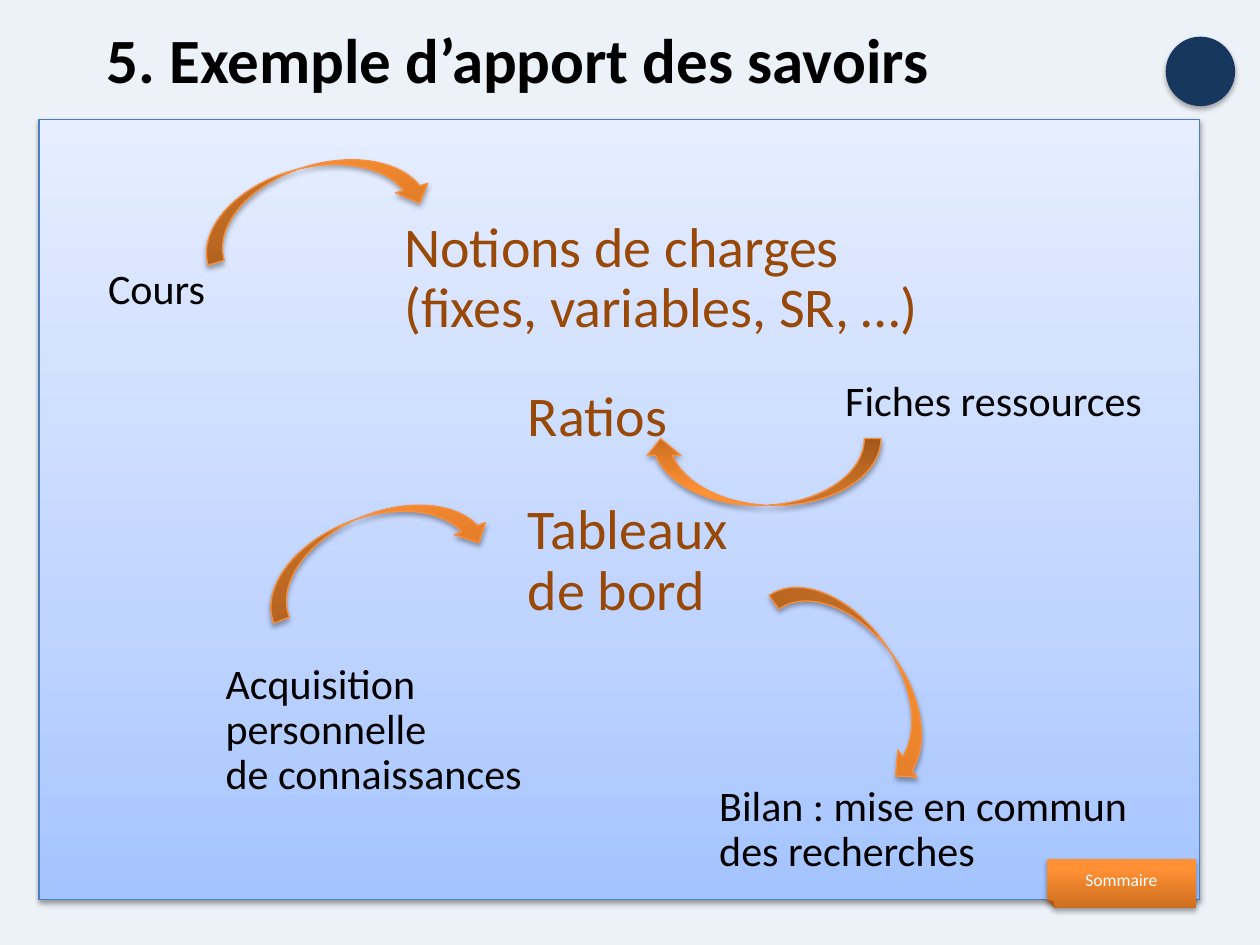
from collections import namedtuple

from lxml.etree import SubElement
from pptx import Presentation
from pptx.dml.color import RGBColor
from pptx.enum.shapes import MSO_SHAPE
from pptx.enum.text import MSO_ANCHOR, MSO_AUTO_SIZE, PP_ALIGN
from pptx.oxml.ns import qn
from pptx.util import Cm, Pt

Box = namedtuple("Box", "left top width height")

FONT = "Calibri"
BACKGROUND = RGBColor(0xED, 0xF2, 0xF8)
BLACK = RGBColor(0x00, 0x00, 0x00)
WHITE = RGBColor(0xFF, 0xFF, 0xFF)
BROWN = RGBColor(0x98, 0x48, 0x07)
NAVY = RGBColor(0x17, 0x37, 0x5E)
PANEL_LINE = RGBColor(0x4B, 0x7E, 0xBC)
ARROW_LINE = RGBColor(0xF6, 0x92, 0x40)
BLUE_STOPS = ((0, RGBColor(0xA4, 0xC4, 0xFF)), (35, RGBColor(0xBF, 0xD4, 0xFF)),
              (100, RGBColor(0xE6, 0xEE, 0xFF)))
ORANGE_STOPS = ((0, RGBColor(0xCC, 0x6E, 0x20)), (80, RGBColor(0xFF, 0x90, 0x34)),
                (100, RGBColor(0xFF, 0x91, 0x36)))

# Text, box inside the panel, whether it hangs from the bottom of its box
SOURCES = (
    ("Cours", Box(1.14, 2.87, 3.81, 1.96), False),
    ("Fiches ressources", Box(16, 4.9, 8.61, 1.4), True),
    ("Acquisition \vpersonnelle\vde connaissances", Box(3.51, 12.42, 8.61, 1.4), True),
    ("Bilan : mise en commun des recherches", Box(13.46, 13.97, 9.25, 1.4), True),
)
TOPICS = (
    ("Notions de charges\v(fixes, variables, SR, …)", Box(7.11, 1.88, 11.4, 2.59), False),
    ("Ratios", Box(9.6, 5.28, 3.71, 1.4), False),
    ("Tableaux \vde bord", Box(9.6, 7.57, 5.18, 1.4), False),
)
# Left and top inside the panel, rotation
ARROWS = ((3.12, 0.94, 343.7), (12.19, 6.43, 180), (4.32, 7.98, 338.6), (14.25, 10.49, 55))
ARROW_WIDTH, ARROW_HEIGHT = 4.78, 1.35


def lengths(box):
    return [Cm(value) for value in box]


def inside(outer, inner):
    """Turn a box relative to outer into a box on the page."""
    return inner._replace(left=outer.left + inner.left, top=outer.top + inner.top)


def write(para, text, size, color, bold=False):
    """Add the text as runs, with a line break at each vertical tab."""
    for index, line in enumerate(text.split("\v")):
        if index:
            para.add_line_break()
        span = para.add_run()
        span.text = line
        span.font.name = FONT
        span.font.size = Pt(size)
        span.font.bold = bold
        span.font.color.rgb = color


def set_gradient(shape, stops):
    """Fill the shape from its bottom edge to its top edge."""
    shape.fill.gradient()
    shape.fill.gradient_angle = 90
    stop_list = shape._element.spPr.find(qn("a:gradFill")).find(qn("a:gsLst"))
    for old_stop in list(stop_list):
        stop_list.remove(old_stop)
    for position, color in stops:
        stop = SubElement(stop_list, qn("a:gs"), pos=str(position * 1000))
        SubElement(stop, qn("a:srgbClr"), val=str(color))


def set_shadow(shape, opacity=35, distance=1.8):
    shape.shadow.inherit = False
    effects = shape._element.spPr.find(qn("a:effectLst"))
    shadow = SubElement(effects, qn("a:outerShdw"), blurRad=str(Pt(3.1)),
                        dist=str(Pt(distance)), dir="5400000", rotWithShape="0")
    color = SubElement(shadow, qn("a:srgbClr"), val=str(BLACK))
    SubElement(color, qn("a:alpha"), val=str(opacity * 1000))


def set_line(shape, color):
    shape.line.color.rgb = color
    shape.line.width = Pt(0.75)


def add_title(page, box, text):
    title = page.shapes.title
    title.left, title.top, title.width, title.height = lengths(box)
    frame = title.text_frame
    frame.auto_size = MSO_AUTO_SIZE.NONE
    frame.vertical_anchor = MSO_ANCHOR.MIDDLE
    para = frame.paragraphs[0]
    para.alignment = PP_ALIGN.LEFT
    write(para, text, 36, BLACK, bold=True)


def add_badge(page, box):
    badge = page.shapes.add_shape(MSO_SHAPE.OVAL, *lengths(box))
    badge.fill.solid()
    badge.fill.fore_color.rgb = NAVY
    badge.line.fill.background()
    set_shadow(badge)


def add_label(page, box, text, size, color, at_bottom):
    frame = page.shapes.add_textbox(*lengths(box)).text_frame
    frame.word_wrap = True
    frame.vertical_anchor = MSO_ANCHOR.BOTTOM if at_bottom else MSO_ANCHOR.TOP
    para = frame.paragraphs[0]
    para.line_spacing = 0.9
    para.space_before = Pt(0.2 * size)
    write(para, text, size, color)


def add_arrow(page, box, rotation):
    arrow = page.shapes.add_shape(MSO_SHAPE.CURVED_DOWN_ARROW, *lengths(box))
    arrow.rotation = rotation
    set_gradient(arrow, ORANGE_STOPS)
    set_line(arrow, ARROW_LINE)
    set_shadow(arrow)


def add_knowledge_panel(page, box):
    panel = page.shapes.add_shape(MSO_SHAPE.RECTANGLE, *lengths(box))
    set_gradient(panel, BLUE_STOPS)
    set_line(panel, PANEL_LINE)
    set_shadow(panel, opacity=38, distance=1.6)
    for labels, size, color in ((SOURCES, 24, BLACK), (TOPICS, 32, BROWN)):
        for text, place, at_bottom in labels:
            add_label(page, inside(box, place), text, size, color, at_bottom)
    for left, top, rotation in ARROWS:
        place = Box(left, top, ARROW_WIDTH, ARROW_HEIGHT)
        add_arrow(page, inside(box, place), rotation)


def add_summary_button(page, box):
    button = page.shapes.add_shape(MSO_SHAPE.FOLDED_CORNER, *lengths(box))
    button._element.spPr.find(qn("a:xfrm")).set("flipH", "1")
    set_gradient(button, ORANGE_STOPS)
    button.line.fill.background()
    set_shadow(button)
    frame = button.text_frame
    frame.vertical_anchor = MSO_ANCHOR.MIDDLE
    para = frame.paragraphs[0]
    para.alignment = PP_ALIGN.CENTER
    write(para, "Sommaire", 10, WHITE)


def main():
    deck = Presentation()
    deck.slide_width, deck.slide_height = Cm(25.4), Cm(19.05)
    page = deck.slides.add_slide(deck.slide_layouts.get_by_name("Title Only"))
    page.background.fill.solid()
    page.background.fill.fore_color.rgb = BACKGROUND
    add_title(page, Box(1.9, 0.43, 19.08, 1.5), "5. Exemple d’apport des savoirs")
    add_badge(page, Box(23.5, 0.74, 1.4, 1.4))
    add_knowledge_panel(page, Box(0.79, 2.41, 23.39, 15.73))
    add_summary_button(page, Box(21.11, 17.32, 3, 0.99))
    deck.save("out.pptx")


if __name__ == "__main__":
    main()
